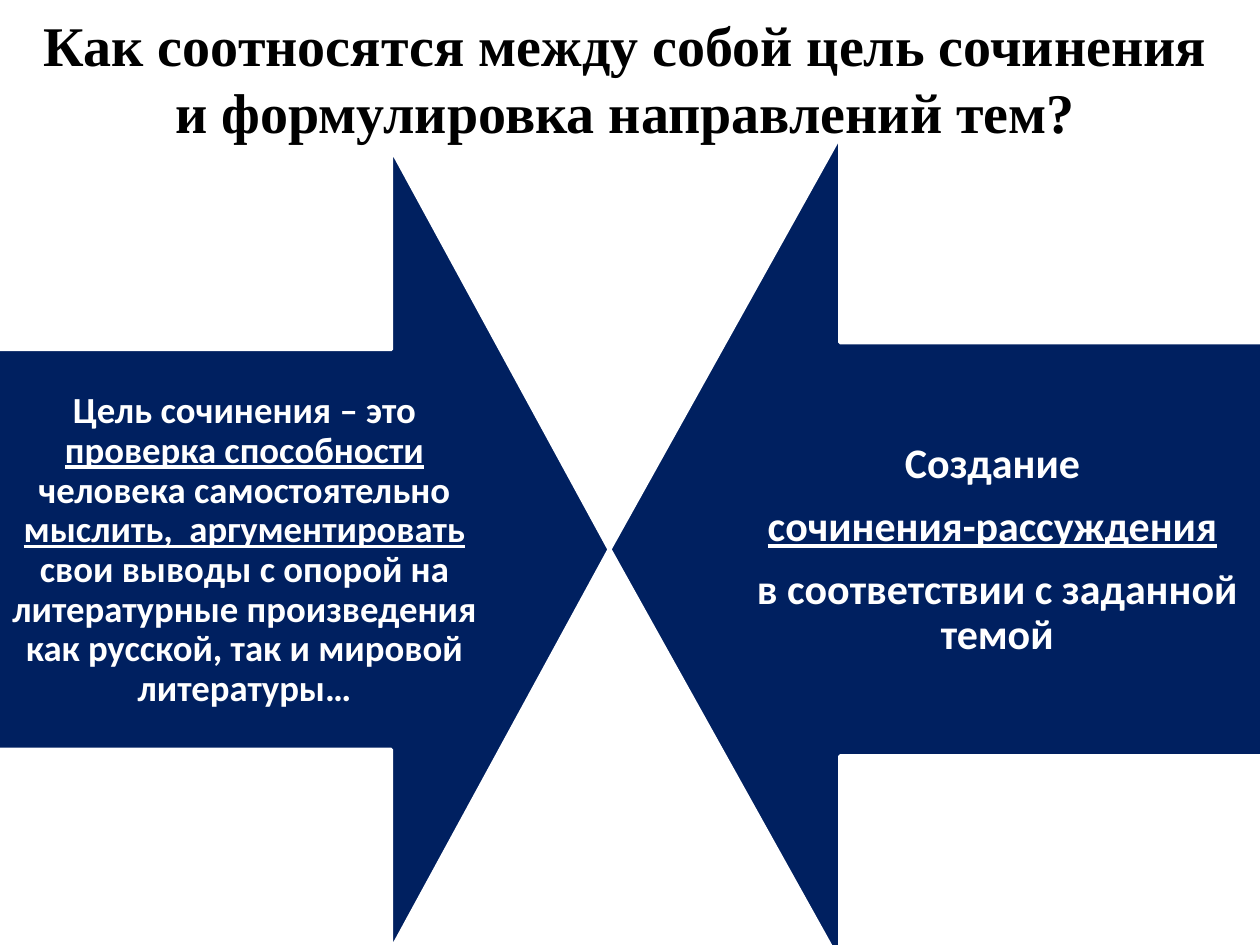
import pptx
import pptx.util
import pptx.dml.color
import pptx.enum.shapes
import pptx.enum.text

Pt = pptx.util.Pt

TITLE = "Как соотносятся между собой цель сочинения и формулировка направлений тем?"
NAVY, WHITE, BLACK = "002060", "FFFFFF", "000000"

# Boxes are left, top, width, height; each run is (text, underlined).
ARROWS = [
    {
        "box": (-58.3, 136.1, 457.2, 355.7), "rotation": 270,
        "text_box": (-7.2, 200.2, 293.8, 229), "inset": 11.5,
        "size": 21, "space_after": 9,
        "paragraphs": [[
            ("Цель сочинения – это ", False),
            ("проверка способности ", True),
            ("человека самостоятельно ", False),
            ("мыслить,  аргументировать ", True),
            ("свои выводы с опорой на литературные произведения "
             "как русской, так и мировой литературы…", False),
        ]],
    },
    {
        "box": (300.2, 126, 472.3, 375.8), "rotation": 90,
        "text_box": (414.7, 196.6, 310.3, 236.2), "inset": 13.7,
        "size": 24, "space_after": 10,
        "paragraphs": [
            [("Создание ", False)],
            [("сочинения-рассуждения", True), (" ", False)],
            [("в соответствии с заданной темой", False)],
        ],
    },
]


def color(value):
    return pptx.dml.color.RGBColor.from_string(value)


def add_text(slide, box, paragraphs, font, size, ink, insets, line_spacing=None, space_after=0):
    frame = slide.shapes.add_textbox(*map(Pt, box)).text_frame
    frame.word_wrap = True
    frame.vertical_anchor = pptx.enum.text.MSO_ANCHOR.MIDDLE
    frame.margin_left = frame.margin_right = Pt(insets[0])
    frame.margin_top = frame.margin_bottom = Pt(insets[1])
    for index, runs in enumerate(paragraphs):
        paragraph = frame.add_paragraph() if index else frame.paragraphs[0]
        paragraph.alignment = pptx.enum.text.PP_ALIGN.CENTER
        paragraph.line_spacing = line_spacing
        paragraph.space_after = Pt(space_after)
        for text, underlined in runs:
            run = paragraph.add_run()
            run.text = text
            run.font.name = font
            run.font.size = Pt(size)
            run.font.bold = True
            run.font.underline = underlined
            run.font.color.rgb = color(ink)


def add_arrow(slide, box, rotation):
    arrow = slide.shapes.add_shape(
        pptx.enum.shapes.MSO_SHAPE.DOWN_ARROW, *map(Pt, box))
    arrow.rotation = rotation
    arrow.adjustments[0] = 0.5
    arrow.adjustments[1] = 0.35
    arrow.shadow.inherit = False
    arrow.fill.solid()
    arrow.fill.fore_color.rgb = color(NAVY)
    arrow.line.color.rgb = color(WHITE)
    arrow.line.width = Pt(2)


def main():
    deck = pptx.Presentation()
    deck.slide_width, deck.slide_height = Pt(720), Pt(540)
    slide = deck.slides.add_slide(deck.slide_layouts[6])

    add_text(slide, (14.4, 0, 686.2, 88.6), [[(TITLE, False)]],
             "Times New Roman", 32, BLACK, (7.2, 3.6))
    for arrow in ARROWS:
        add_arrow(slide, arrow["box"], arrow["rotation"])
        add_text(slide, arrow["text_box"], arrow["paragraphs"], "Calibri",
                 arrow["size"], WHITE, (arrow["inset"], arrow["inset"]),
                 0.9, arrow["space_after"])
    deck.save("out.pptx")


if __name__ == "__main__":
    main()
